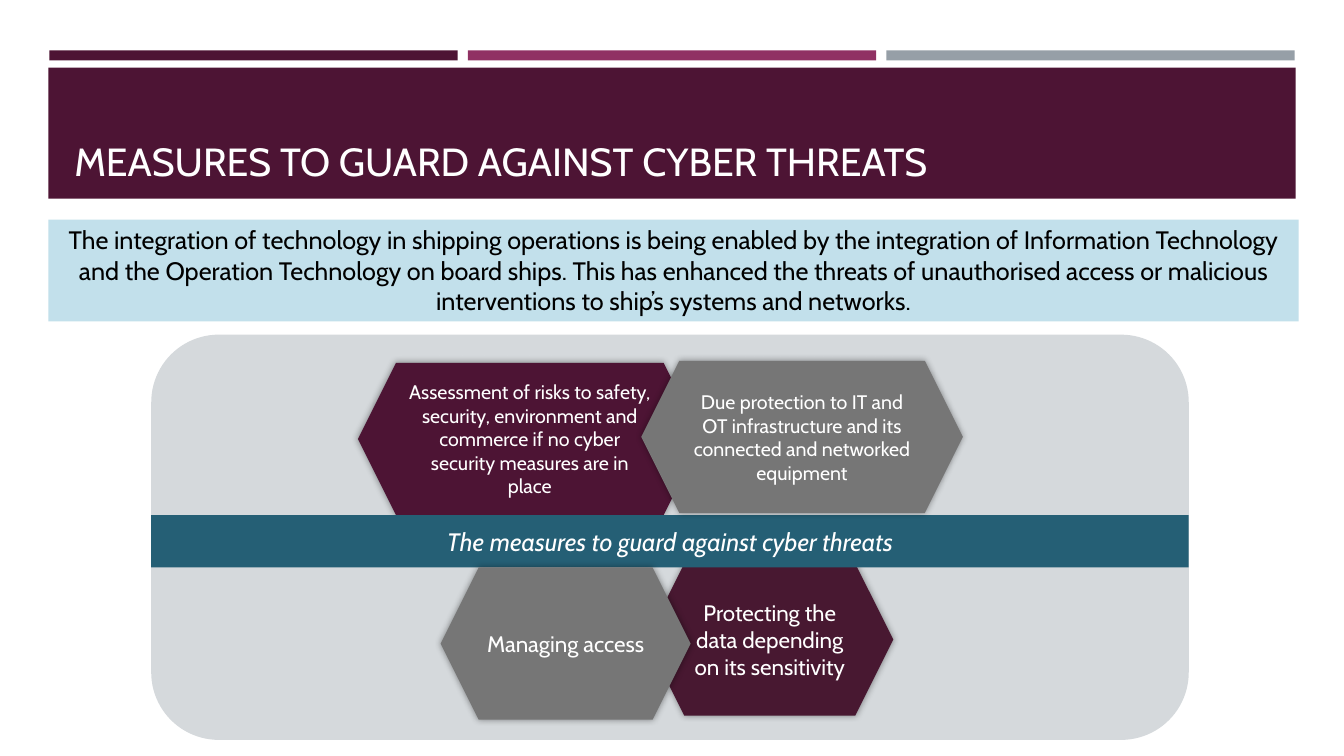
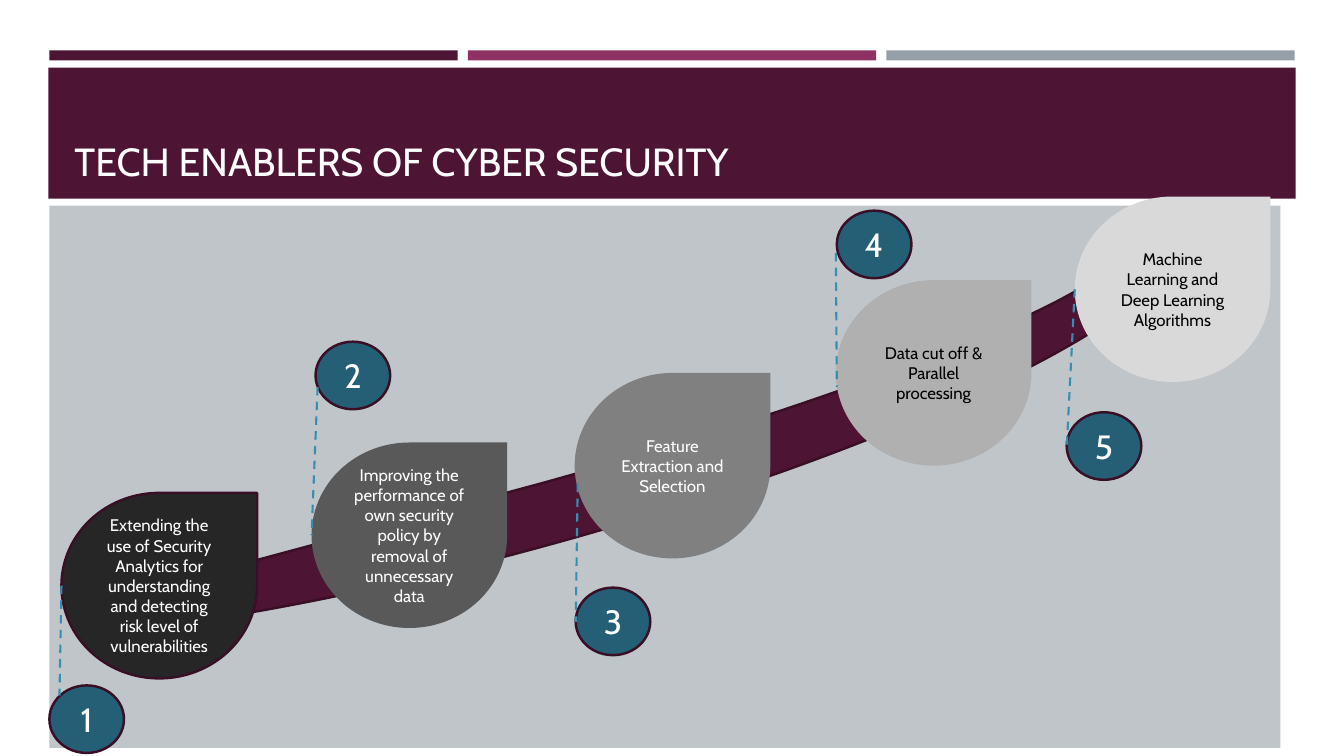
from dataclasses import dataclass
from typing import Optional

from lxml import etree
from pptx import Presentation
from pptx import util as u
from pptx.dml.color import RGBColor
from pptx.enum import dml, shapes, text
from pptx.oxml import ns

# Shared style
FONT = "Cabin"
WHITE = RGBColor(0xFF, 0xFF, 0xFF)
BLACK = RGBColor(0x00, 0x00, 0x00)
PLUM = RGBColor(0x4D, 0x14, 0x34)
DARK_PLUM = RGBColor(0x48, 0x18, 0x31)
OUTLINE = RGBColor(0x39, 0x0F, 0x26)
MAGENTA = RGBColor(0x90, 0x31, 0x63)
SLATE = RGBColor(0x96, 0x9F, 0xA7)
TEAL = RGBColor(0x25, 0x5F, 0x75)
DASH_BLUE = RGBColor(0x38, 0x8E, 0xAF)
PALE_BLUE = RGBColor(0xC2, 0xE0, 0xEB)
PALE_PANEL = RGBColor(0xD5, 0xD9, 0xDC)
PANEL = RGBColor(0xC0, 0xC5, 0xCA)
GREY = RGBColor(0x76, 0x76, 0x76)

SHAPE = shapes.MSO_SHAPE
ANCHOR = text.MSO_ANCHOR
ALIGN = text.PP_ALIGN


@dataclass(frozen=True)
class Box:
    left: float
    top: float
    width: float
    height: float

    def lengths(self) -> tuple:
        return tuple(u.Inches(v) for v in
                     (self.left, self.top, self.width, self.height))


@dataclass(frozen=True)
class Words:
    content: str
    size: float
    color: RGBColor = WHITE
    italic: bool = False


@dataclass(frozen=True)
class Measure:
    box: Box
    fill: RGBColor
    words: Words


@dataclass(frozen=True)
class Enabler:
    content: str
    drop: tuple
    badge: tuple
    start: tuple
    end: tuple
    fill: RGBColor
    color: RGBColor = WHITE
    outline: Optional[RGBColor] = None


# Drawing helpers
def write(frame, words: Words, anchor=ANCHOR.MIDDLE, align=ALIGN.CENTER) -> None:
    frame.word_wrap = True
    frame.vertical_anchor = anchor
    paragraph = frame.paragraphs[0]
    paragraph.alignment = align
    run = paragraph.add_run()
    run.text = words.content
    run.font.name = FONT
    run.font.size = u.Pt(words.size)
    run.font.italic = words.italic
    run.font.color.rgb = words.color


def draw(slide, preset, box: Box, fill: RGBColor,
         words: Optional[Words] = None, outline: Optional[RGBColor] = None,
         anchor=ANCHOR.MIDDLE):
    shape = slide.shapes.add_shape(preset, *box.lengths())
    shape.shadow.inherit = False
    shape.fill.solid()
    shape.fill.fore_color.rgb = fill
    if outline is None:
        shape.line.fill.background()
    else:
        shape.line.color.rgb = outline
        shape.line.width = u.Pt(1.75)
    if words:
        write(shape.text_frame, words, anchor)
    return shape


def draw_measure(slide, measure: Measure) -> None:
    hexagon = draw(slide, SHAPE.HEXAGON, measure.box, measure.fill, measure.words)
    hexagon.text_frame.margin_left = hexagon.text_frame.margin_right = u.Inches(0.09)
    effects = hexagon._element.spPr.find(ns.qn("a:effectLst"))
    glow = etree.SubElement(effects, ns.qn("a:outerShdw"),
                            blurRad=str(u.Pt(5)), dist="0", dir="0")
    color = etree.SubElement(glow, ns.qn("a:srgbClr"), val=str(BLACK))
    etree.SubElement(color, ns.qn("a:alpha"), val="40000")


def draw_dashed_line(slide, start: tuple, end: tuple) -> None:
    line = slide.shapes.add_connector(
        shapes.MSO_CONNECTOR.STRAIGHT,
        *(u.Inches(v) for v in (*start, *end)))
    line.line.color.rgb = DASH_BLUE
    line.line.width = u.Pt(1.5)
    line.line.dash_style = dml.MSO_LINE.DASH
    etree.SubElement(line._element.spPr, ns.qn("a:effectLst"))


def add_titled_slide(deck, heading: str):
    slide = deck.slides.add_slide(deck.slide_layouts[6])
    for column, color in enumerate((PLUM, MAGENTA, SLATE)):
        draw(slide, SHAPE.RECTANGLE, Box(0.49 + 4.15 * column, 0.5, 4.05, 0.1), color)
    draw(slide, SHAPE.RECTANGLE, Box(0.48, 0.67, 12.37, 1.3), PLUM)
    title = slide.shapes.add_textbox(*Box(0.64, 0.77, 12.06, 1.11).lengths())
    write(title.text_frame, Words(heading, 28), ANCHOR.BOTTOM, ALIGN.LEFT)
    return slide


# Slide content
INTRO = ("The integration of technology in shipping operations is being enabled by "
         "the integration of Information Technology and the Operation Technology on "
         "board ships. This has enhanced the threats of unauthorised access or "
         "malicious interventions to ship’s systems and networks.")

MEASURES_BEHIND_BANNER = (
    Measure(Box(6.41, 5.59, 2.45, 1.51), DARK_PLUM,
            Words("Protecting the data depending on its sensitivity", 16)),
    Measure(Box(3.55, 3.6, 3.41, 1.51), PLUM,
            Words("Assessment of risks to safety, security, environment and "
                  "commerce if no cyber security measures are in place", 14)),
)
MEASURES_IN_FRONT = (
    Measure(Box(6.36, 3.58, 3.19, 1.51), GREY,
            Words("Due protection to IT and OT infrastructure and its connected "
                  "and networked equipment", 14)),
    Measure(Box(4.37, 5.63, 2.48, 1.51), GREY, Words("Managing access", 16)),
)

ENABLERS = (
    Enabler("Extending the use of Security Analytics for understanding and "
            "detecting risk level of vulnerabilities",
            (0.61, 4.89), (0.49, 6.8), (0.61, 5.81), (0.59, 6.9),
            RGBColor(0x26, 0x26, 0x26), outline=OUTLINE),
    Enabler("Improving the performance of own security policy by removal of "
            "unnecessary data",
            (3.09, 4.39), (3.13, 3.39), (3.15, 3.84), (3.09, 5.31),
            RGBColor(0x59, 0x59, 0x59)),
    Enabler("Feature Extraction and Selection",
            (5.7, 3.7), (5.71, 5.83), (5.73, 4.8), (5.71, 6.17),
            RGBColor(0x80, 0x80, 0x80)),
    Enabler("Data cut off & Parallel processing",
            (8.29, 2.78), (8.3, 2.09), (8.29, 2.51), (8.3, 3.84),
            RGBColor(0xB0, 0xB0, 0xB0), BLACK),
    Enabler("Machine Learning and Deep Learning Algorithms",
            (10.66, 1.95), (10.58, 4.09), (10.66, 2.87), (10.58, 4.43),
            RGBColor(0xD9, 0xD9, 0xD9), BLACK),
)


def build_measures(deck) -> None:
    slide = add_titled_slide(deck, "MEASURES TO GUARD AGAINST CYBER THREATS")
    draw(slide, SHAPE.ROUNDED_RECTANGLE, Box(1.5, 3.32, 10.29, 4.02), PALE_PANEL)
    draw(slide, SHAPE.RECTANGLE, Box(0.48, 2.18, 12.4, 1.01), PALE_BLUE,
         Words(INTRO, 18, BLACK), anchor=ANCHOR.TOP)
    for measure in MEASURES_BEHIND_BANNER:
        draw_measure(slide, measure)
    draw(slide, SHAPE.RECTANGLE, Box(1.5, 5.11, 10.29, 0.52), TEAL,
         Words("The measures to guard against cyber threats", 18, italic=True))
    for measure in MEASURES_IN_FRONT:
        draw_measure(slide, measure)


def build_enablers(deck) -> None:
    slide = add_titled_slide(deck, "TECH ENABLERS OF CYBER SECURITY")
    draw(slide, SHAPE.RECTANGLE, Box(0.49, 2.04, 12.21, 5.38), PANEL)

    # Rising path behind the drops
    path_arc = draw(slide, SHAPE.CIRCULAR_ARROW, Box(-2.48, 2.07, 15.14, 4.05),
                    PLUM, outline=OUTLINE)
    path_arc.rotation = 164.6
    for index, value in enumerate((0.15, 13.17, 197.69, 109.61, 0.24)):
        path_arc.adjustments[index] = value

    # Drops, numbered badges and the lines joining them
    for enabler in ENABLERS:
        draw(slide, SHAPE.TEAR, Box(*enabler.drop, 1.94, 1.84), enabler.fill,
             Words(enabler.content, 12, enabler.color), enabler.outline)
    for number, enabler in enumerate(ENABLERS, start=1):
        draw(slide, SHAPE.OVAL, Box(*enabler.badge, 0.74, 0.67), TEAL,
             Words(str(number), 24), OUTLINE)
        draw_dashed_line(slide, enabler.start, enabler.end)


def main() -> None:
    deck = Presentation()
    deck.slide_width = u.Inches(13.33)
    deck.slide_height = u.Inches(7.5)
    build_measures(deck)
    build_enablers(deck)
    deck.save("out.pptx")


if __name__ == "__main__":
    main()
